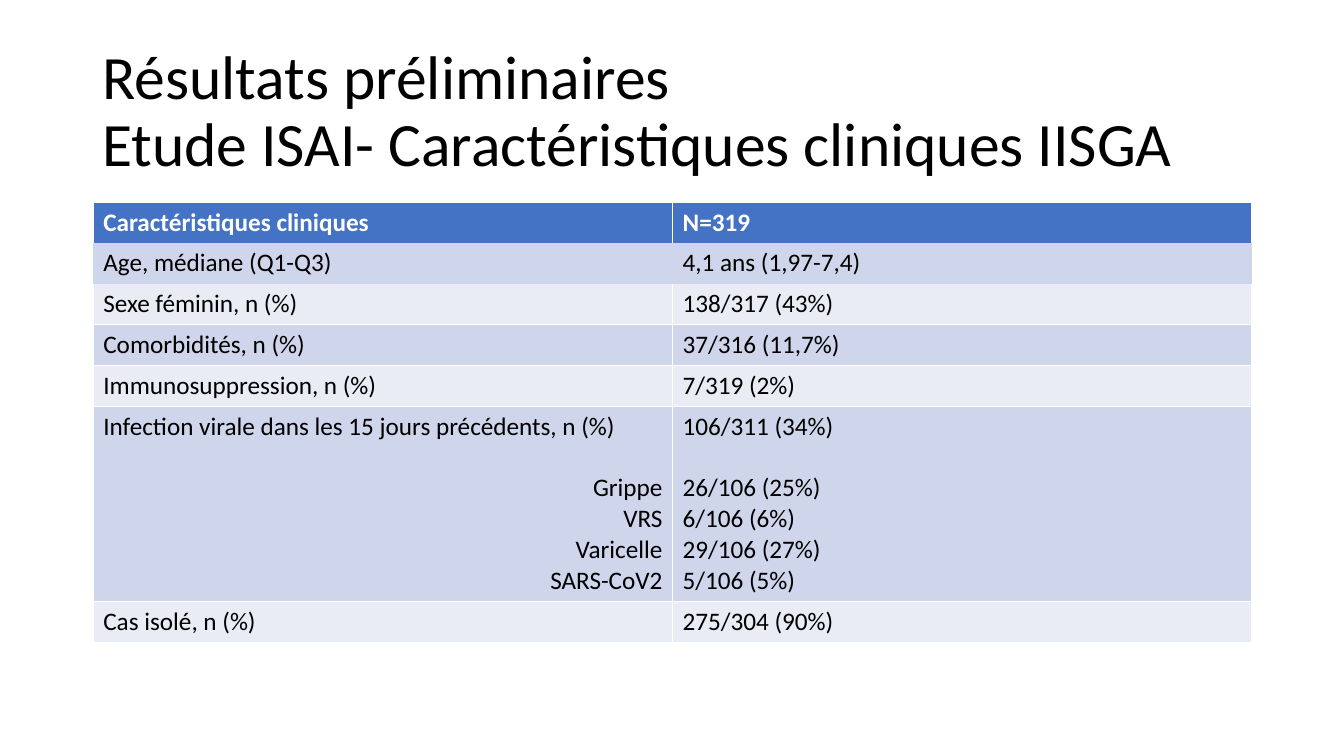
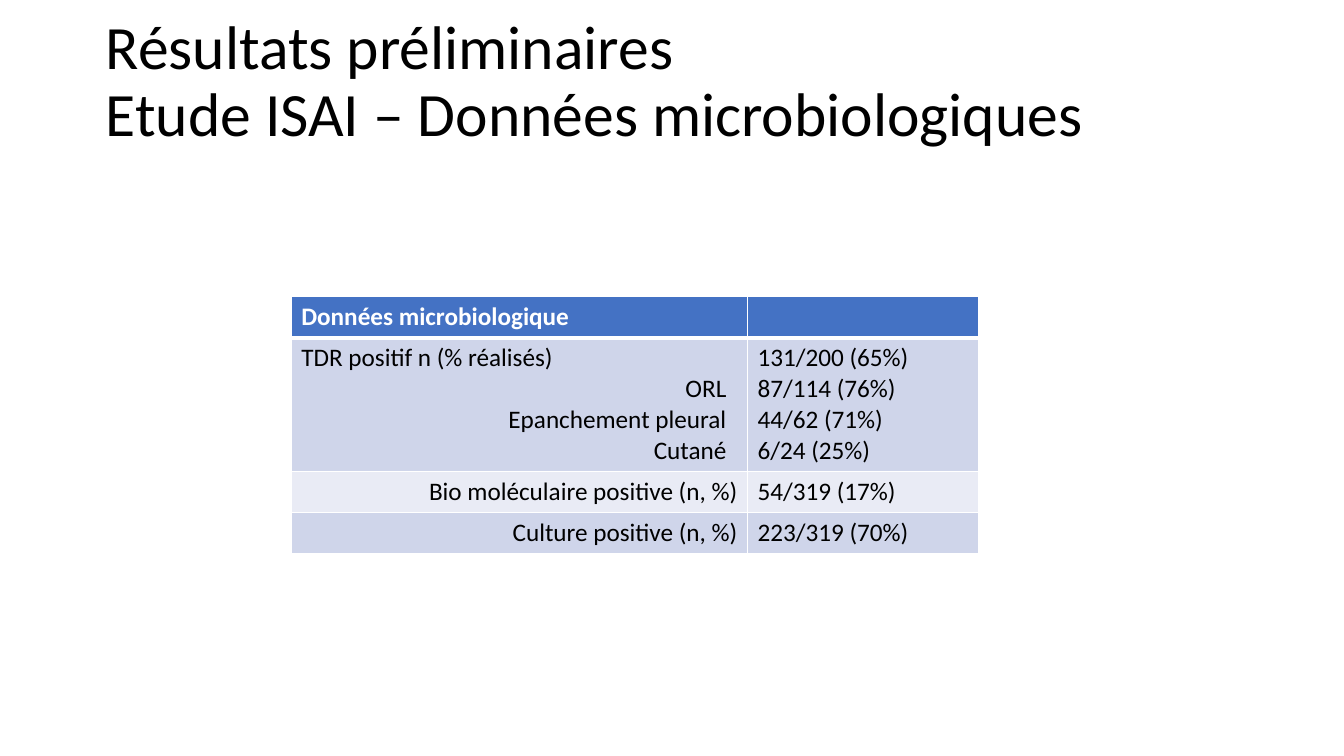
from lxml.etree import SubElement
from pptx import Presentation
from pptx.dml.color import RGBColor
from pptx.enum.text import MSO_ANCHOR, PP_ALIGN
from pptx.oxml.ns import qn
from pptx.util import Cm, Pt

FONT = "Calibri"
BLACK = RGBColor(0x00, 0x00, 0x00)
WHITE = RGBColor(0xFF, 0xFF, 0xFF)
BLUE = RGBColor(0x44, 0x72, 0xC4)
BAND_DARK = RGBColor(0xCF, 0xD5, 0xEA)
BAND_LIGHT = RGBColor(0xE9, 0xEB, 0xF5)
ROW_HEIGHT = 1.03
LINE_HEIGHT = 0.78

CLINICAL_ROWS = [
    (["Caractéristiques cliniques"], ["N=319"]),
    (["Age, médiane (Q1-Q3)"], ["4,1 ans (1,97-7,4)"]),
    (["Sexe féminin, n (%)"], ["138/317 (43%)"]),
    (["Comorbidités, n (%)"], ["37/316 (11,7%)"]),
    (["Immunosuppression, n (%)"], ["7/319 (2%)"]),
    (["Infection virale dans les 15 jours précédents, n (%)",
      "Grippe", "VRS", "Varicelle", "SARS-CoV2"],
     ["106/311 (34%)", "26/106 (25%)", "6/106 (6%)", "29/106 (27%)", "5/106 (5%)"]),
    (["Cas isolé, n (%)"], ["275/304 (90%)"]),
]
MICROBIOLOGY_ROWS = [
    (["Données microbiologique"], [""]),
    (["TDR positif n (% réalisés)", "ORL", "Epanchement pleural", "Cutané"],
     ["131/200 (65%)", "87/114 (76%)", "44/62 (71%)", "6/24 (25%)"]),
    (["Bio moléculaire positive (n, %)"], ["54/319 (17%)"]),
    (["Culture positive (n, %)"], ["223/319 (70%)"]),
]


def write(p, text, size=18, color=BLACK, bold=False, align=PP_ALIGN.LEFT,
          space_before=0, line_spacing=None):
    p.text = text
    p.alignment = align
    if space_before:
        p.space_before = Pt(space_before)
    if line_spacing:
        p.line_spacing = line_spacing
    for r in p.runs:
        r.font.name = FONT
        r.font.size = Pt(size)
        r.font.bold = bold
        r.font.color.rgb = color


def add_title(s, text, left, top, width, height):
    tf = s.shapes.add_textbox(Cm(left), Cm(top), Cm(width), Cm(height)).text_frame
    tf.word_wrap = True
    tf.vertical_anchor = MSO_ANCHOR.MIDDLE
    write(tf.paragraphs[0], text, size=44, line_spacing=0.9)


def set_borders(cell, widths):
    tc_pr = cell._tc.get_or_add_tcPr()
    for side in ("L", "R", "T", "B"):
        ln = SubElement(tc_pr, qn(f"a:ln{side}"), w=str(Pt(widths[side])))
        if widths[side]:
            fill = SubElement(ln, qn("a:solidFill"))
            SubElement(fill, qn("a:srgbClr"), val=str(WHITE))
        else:
            SubElement(ln, qn("a:noFill"))


def fill_cell(cell, lines, is_header, right_from, gap):
    for i, line in enumerate(lines):
        tf = cell.text_frame
        p = tf.add_paragraph() if i else tf.paragraphs[0]
        write(p, line, color=WHITE if is_header else BLACK, bold=is_header,
              align=PP_ALIGN.RIGHT if i >= right_from else PP_ALIGN.LEFT,
              space_before=gap if i == 1 else 0)


def add_data_table(s, rows, left, top, col_widths, gap=0, header_line=1,
                   plain_row=None, right_rows=()):
    heights = [ROW_HEIGHT + LINE_HEIGHT * (len(labels) - 1)
               + (Pt(gap).cm if len(labels) > 1 else 0) for labels, _ in rows]
    table = s.shapes.add_table(len(rows), len(col_widths), Cm(left), Cm(top),
                               Cm(sum(col_widths)), Cm(sum(heights))).table
    for column, width in zip(table.columns, col_widths):
        column.width = Cm(width)
    for i, row in enumerate(rows):
        table.rows[i].height = Cm(heights[i])
        side = 0 if i == plain_row else 1
        above = header_line if i == 1 else 1
        below = header_line if i == 0 else 1
        widths = {"L": side, "R": side,
                  "T": 0 if plain_row in (i, i - 1) and i else above,
                  "B": 0 if plain_row in (i, i + 1) else below}
        for j, lines in enumerate(row):
            cell = table.cell(i, j)
            set_borders(cell, widths)
            cell.fill.solid()
            cell.fill.fore_color.rgb = (
                BLUE if i == 0 else BAND_DARK if i % 2 else BAND_LIGHT)
            right_from = len(lines) if j else 0 if i in right_rows else 1
            fill_cell(cell, lines, i == 0, right_from, gap)
    return table


def clinical_slide(s):
    add_title(s, "Résultats préliminaires\vEtude ISAI- Caractéristiques cliniques IISGA",
              2.33, 1.01, 29.21, 3.68)
    add_data_table(s, CLINICAL_ROWS, 2.35, 5.09, [14.6, 14.6], gap=22, plain_row=1)


def microbiology_slide(s):
    add_title(s, "Résultats préliminaires\vEtude ISAI – Données microbiologiques",
              2.42, 0.28, 29.13, 3.63)
    table = add_data_table(s, MICROBIOLOGY_ROWS, 7.34, 7.48, [11.5, 5.83],
                           header_line=3, right_rows=(2, 3))
    orl = table.cell(1, 0).text_frame.paragraphs[1]
    orl._p.get_or_add_pPr().set("marR", str(Cm(0.28)))


def main():
    prs = Presentation()
    prs.slide_width, prs.slide_height = Cm(33.87), Cm(19.05)
    for build in (clinical_slide, microbiology_slide):
        build(prs.slides.add_slide(prs.slide_layouts[6]))
    prs.save("out.pptx")


if __name__ == "__main__":
    main()
